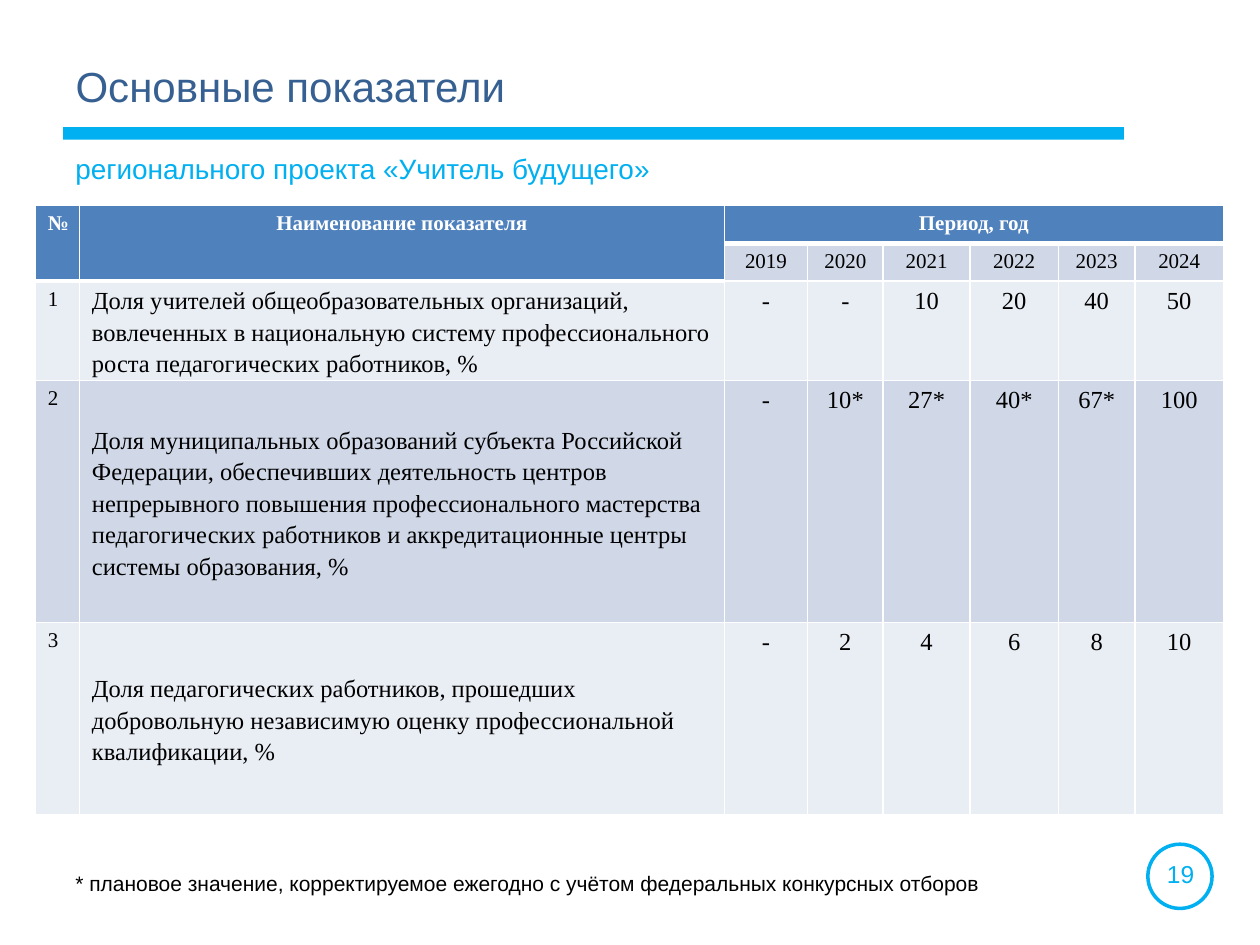
from dataclasses import dataclass

from lxml.etree import SubElement
from pptx import Presentation
from pptx.dml.color import RGBColor
from pptx.enum.shapes import MSO_SHAPE as Preset
from pptx.enum.text import MSO_ANCHOR as Anchor, MSO_AUTO_SIZE as AutoSize, PP_ALIGN as Align
from pptx.oxml.ns import qn
from pptx.util import Inches, Pt


@dataclass(frozen=True)
class Theme:
    sans: str = "Arial"
    serif: str = "Times New Roman"
    accent: str = "00B0F0"
    heading: str = "376092"
    header: str = "4F81BD"
    dark_band: str = "D0D8E8"
    light_band: str = "E9EDF4"
    white: str = "FFFFFF"
    black: str = "000000"
    title_size: int = 24
    subtitle_size: int = 16
    body_size: int = 14
    small_size: int = 12


YEARS = ["2019", "2020", "2021", "2022", "2023", "2024"]
INDICATORS = [
    ("Доля учителей общеобразовательных организаций, вовлеченных в национальную "
     "систему профессионального роста педагогических работников, %",
     ["-", "-", "10", "20", "40", "50"]),
    ("Доля муниципальных образований субъекта Российской Федерации, обеспечивших "
     "деятельность центров непрерывного повышения профессионального мастерства "
     "педагогических работников и аккредитационные центры системы образования, %",
     ["-", "10*", "27*", "40*", "67*", "100"]),
    ("Доля педагогических работников, прошедших добровольную независимую оценку "
     "профессиональной квалификации, %",
     ["-", "2", "4", "6", "8", "10"]),
]
COLUMN_WIDTHS = [0.35, 5.12, 0.66, 0.6, 0.69, 0.7, 0.61, 0.7]
ROW_HEIGHTS = [0.29, 0.29, 0.79, 1.92, 1.53]
LABEL_COLUMNS = 2
HEADER_ROWS = 2


class SlideBuilder:
    def __init__(self, slide, theme):
        self.slide = slide
        self.theme = theme

    def add_text(self, frame, text, size, color, font=None, bold=False, align=Align.LEFT):
        paragraph = frame.paragraphs[0]
        paragraph.alignment = align
        run = paragraph.add_run()
        run.text = text
        run.font.name = font or self.theme.sans
        run.font.size = Pt(size)
        run.font.bold = bold
        run.font.color.rgb = RGBColor.from_string(color)
        return paragraph

    def title(self, text, left, top, width, height):
        heading = self.slide.shapes.title
        heading.left, heading.top = Inches(left), Inches(top)
        heading.width, heading.height = Inches(width), Inches(height)
        frame = heading.text_frame
        frame.auto_size = AutoSize.NONE
        frame.vertical_anchor = Anchor.TOP
        self.add_text(frame, text, self.theme.title_size, self.theme.heading)

    def label(self, text, left, top, width, height, size, color, align=Align.LEFT):
        box = self.slide.shapes.add_textbox(
            Inches(left), Inches(top), Inches(width), Inches(height))
        box.text_frame.word_wrap = True
        self.add_text(box.text_frame, text, size, color, align=align)

    def shape(self, preset, left, top, width, height, fill=None, line=None):
        figure = self.slide.shapes.add_shape(
            preset, Inches(left), Inches(top), Inches(width), Inches(height))
        figure.shadow.inherit = False
        if fill:
            figure.fill.solid()
            figure.fill.fore_color.rgb = RGBColor.from_string(fill)
        else:
            figure.fill.background()
        if line:
            figure.line.color.rgb = RGBColor.from_string(line)
            figure.line.width = Pt(2)
        else:
            figure.line.fill.background()

    def table(self, left, top, widths, heights):
        grid = self.slide.shapes.add_table(
            len(heights), len(widths), Inches(left), Inches(top),
            Inches(sum(widths)), Inches(sum(heights))).table
        for column, width in zip(grid.columns, widths):
            column.width = Inches(width)
        for row, height in zip(grid.rows, heights):
            row.height = Inches(height)
        for r in range(len(heights)):
            for c in range(len(widths)):
                header_end = HEADER_ROWS if c < LABEL_COLUMNS else 1
                self.borders(grid.cell(r, c), {
                    "a:lnL": 1, "a:lnR": 1,
                    "a:lnT": 3 if r == header_end else 1,
                    "a:lnB": 3 if r < header_end else 1})
                if r < header_end:
                    color = self.theme.header
                else:
                    color = self.theme.light_band if r % 2 == 0 else self.theme.dark_band
                fill = grid.cell(r, c).fill
                fill.solid()
                fill.fore_color.rgb = RGBColor.from_string(color)
        return grid

    def borders(self, cell, edges):
        properties = cell._tc.get_or_add_tcPr()
        for tag, width in edges.items():
            edge = SubElement(properties, qn(tag), w=str(Pt(width)))
            paint = SubElement(edge, qn("a:solidFill"))
            SubElement(paint, qn("a:srgbClr"), val=self.theme.white)

    def header_cell(self, cell, text, last_cell):
        cell.merge(last_cell)
        self.add_text(cell.text_frame, text, self.theme.small_size, self.theme.white,
                      self.theme.serif, True, Align.CENTER)

    def value_cell(self, cell, text, size, align=Align.CENTER):
        self.add_text(cell.text_frame, text, size, self.theme.black, self.theme.serif, align=align)

    def indicator_cell(self, cell, text):
        cell.vertical_anchor = Anchor.MIDDLE
        cell.margin_left = cell.margin_right = Inches(0.02)
        cell.margin_top = cell.margin_bottom = 0
        paragraph = self.add_text(cell.text_frame, text, self.theme.body_size,
                                  self.theme.black, self.theme.serif)
        paragraph.line_spacing = Pt(18)
        paragraph._p.get_or_add_pPr().set("marL", str(Inches(0.08)))


def main():
    deck = Presentation()
    deck.slide_width, deck.slide_height = Inches(10), Inches(7.5)
    theme = Theme()
    builder = SlideBuilder(deck.slides.add_slide(deck.slide_layouts[5]), theme)

    builder.shape(Preset.RECTANGLE, 0.5, 1.01, 8.42, 0.1, fill=theme.accent)
    builder.shape(Preset.OVAL, 9.11, 6.7, 0.51, 0.51, line=theme.accent)
    builder.label("19", 9.08, 6.77, 0.58, 0.34, theme.body_size, theme.accent, Align.CENTER)
    builder.label("регионального проекта «Учитель будущего»", 0.5, 1.15, 8.56, 0.49,
                  theme.subtitle_size, theme.accent)
    builder.title("Основные показатели", 0.5, 0.43, 7.79, 0.64)

    grid = builder.table(0.28, 1.63, COLUMN_WIDTHS, ROW_HEIGHTS)
    builder.header_cell(grid.cell(0, 0), "№", grid.cell(1, 0))
    builder.header_cell(grid.cell(0, 1), "Наименование показателя", grid.cell(1, 1))
    builder.header_cell(grid.cell(0, 2), "Период, год", grid.cell(0, 7))
    for column, year in enumerate(YEARS, LABEL_COLUMNS):
        builder.value_cell(grid.cell(1, column), year, theme.small_size)
    for number, (indicator, values) in enumerate(INDICATORS, 1):
        row = number + HEADER_ROWS - 1
        builder.value_cell(grid.cell(row, 0), str(number), theme.small_size, Align.LEFT)
        builder.indicator_cell(grid.cell(row, 1), indicator)
        for column, value in enumerate(values, LABEL_COLUMNS):
            builder.value_cell(grid.cell(row, column), value, theme.body_size)

    builder.label("* плановое значение, корректируемое ежегодно с учётом федеральных конкурсных отборов",
                  0.5, 6.86, 8.39, 0.35, theme.small_size, theme.black)
    deck.save("out.pptx")


if __name__ == "__main__":
    main()
